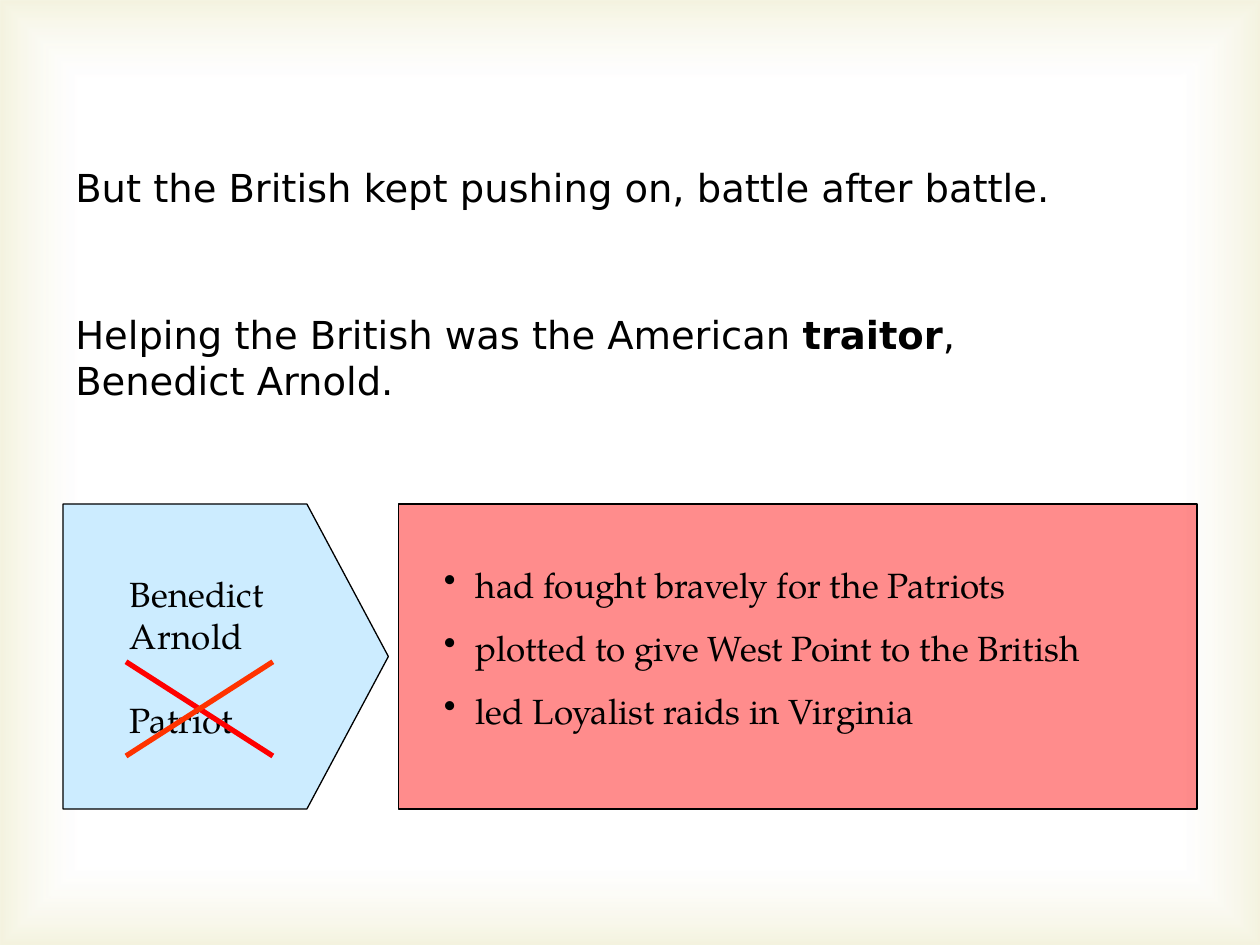
from lxml import etree
from pptx import Presentation
from pptx.dml.color import RGBColor
from pptx.enum.shapes import MSO_CONNECTOR as CONNECTOR, MSO_SHAPE as SHAPE
from pptx.enum.text import MSO_ANCHOR as ANCHOR, PP_ALIGN as ALIGN
from pptx.oxml import parse_xml
from pptx.oxml.ns import nsdecls, qn
from pptx.util import Cm, Pt

BLACK = RGBColor(0, 0, 0)
WHITE = RGBColor(255, 255, 255)
CREAM = RGBColor(0xD1, 0xCA, 0x75)
PALE_BLUE = RGBColor(0xCC, 0xEC, 0xFF)
RED = RGBColor(0xFF, 0, 0)
ORANGE_RED = RGBColor(0xFF, 0x33, 0)
SANS = "DejaVu Sans"
SERIF = "TeX Gyre Pagella"
WIDTH, HEIGHT = 25.4, 19.05
MARGIN = 1.27
PANEL_TOP, PANEL_HEIGHT = 10.16, 6.15


def write(frame, paragraphs, font=SERIF, size=20, margin=0, indent=0,
          spacing=None, gap=0, bullet=None, anchor=ANCHOR.TOP):
    frame.word_wrap = True
    frame.vertical_anchor = anchor
    for index, runs in enumerate(paragraphs):
        paragraph = frame.paragraphs[0] if index == 0 else frame.add_paragraph()
        properties = paragraph._p.get_or_add_pPr()
        properties.set("marL", str(Cm(margin)))
        properties.set("indent", str(Cm(indent)))
        if bullet:
            etree.SubElement(properties, qn("a:buFontTx"))
            etree.SubElement(properties, qn("a:buChar")).set("char", bullet)
        paragraph.alignment = ALIGN.LEFT
        paragraph.line_spacing = spacing
        if index and gap:
            paragraph.space_before = Pt(gap)
        for text, bold in runs:
            for number, line in enumerate(text.split("\n")):
                if number:
                    paragraph.add_line_break()
                run = paragraph.add_run()
                run.text = line
                run.font.name = font
                run.font.size = Pt(size)
                run.font.bold = bold
                run.font.color.rgb = BLACK


def add_statement(slide, top, height, paragraphs):
    statement = slide.shapes.add_textbox(
        Cm(MARGIN), Cm(top), Cm(WIDTH - 2 * MARGIN), Cm(height))
    write(statement.text_frame, paragraphs, font=SANS, size=22)


def add_panel(slide, kind, left, width, color, opacity=100):
    panel = slide.shapes.add_shape(
        kind, Cm(left), Cm(PANEL_TOP), Cm(width), Cm(PANEL_HEIGHT))
    panel.shadow.inherit = False
    panel.fill.solid()
    panel.fill.fore_color.rgb = color
    if opacity < 100:
        tint = panel._element.spPr.find(qn("a:solidFill"))[0]
        etree.SubElement(tint, qn("a:alpha")).set("val", str(opacity * 1000))
    panel.line.color.rgb = BLACK
    panel.line.width = Pt(0.75)
    return panel


def add_stroke(slide, start, end, color):
    stroke = slide.shapes.add_connector(
        CONNECTOR.STRAIGHT, *(Cm(value) for value in start + end))
    stroke.line.color.rgb = color
    stroke.line.width = Pt(3)
    etree.SubElement(stroke._element.spPr, qn("a:effectLst"))


def add_glow(slide):
    glow = slide.shapes.add_shape(SHAPE.RECTANGLE, 0, 0, Cm(WIDTH), Cm(HEIGHT))
    glow.shadow.inherit = False
    glow.line.fill.background()
    stops = "".join(
        f'<a:gs pos="{position * 1000}"><a:srgbClr val="{color}">'
        f'<a:alpha val="{opacity * 1000}"/></a:srgbClr></a:gs>'
        for position, color, opacity in ((83, WHITE, 11), (100, CREAM, 23)))
    gradient = parse_xml(
        f'<a:gradFill {nsdecls("a")} rotWithShape="1"><a:gsLst>{stops}</a:gsLst>'
        '<a:path path="rect"><a:fillToRect l="50000" t="50000" r="50000" '
        'b="50000"/></a:path></a:gradFill>')
    glow._element.spPr.find(qn("a:prstGeom")).addnext(gradient)


def main():
    deck = Presentation()
    deck.slide_width, deck.slide_height = Cm(WIDTH), Cm(HEIGHT)
    slide = deck.slides.add_slide(deck.slide_layouts[6])
    add_glow(slide)

    add_statement(slide, 3.18, 1.19, [
        [("But the British kept pushing on, battle after battle.", False)]])
    add_statement(slide, 6.15, 2.11, [
        [("Helping the British was the American ", False),
         ("traitor", True), (",", False)],
        [("Benedict Arnold.", False)]])

    person = add_panel(slide, SHAPE.PENTAGON, MARGIN, 6.56, PALE_BLUE)
    person.adjustments[0] = 0.267
    write(person.text_frame,
          [[("Benedict\nArnold", False)], [("Patriot", False)]],
          margin=1.1, gap=24, anchor=ANCHOR.MIDDLE)

    deeds = add_panel(slide, SHAPE.RECTANGLE, 8.04, 16.09, RED, opacity=45)
    deeds.text_frame.margin_top = Cm(0.62)
    deeds.text_frame.margin_bottom = Cm(1.4)
    write(deeds.text_frame,
          [[(deed, False)] for deed in (
              "had fought bravely for the Patriots",
              "plotted to give West Point to the British",
              "led Loyalist raids in Virginia")],
          margin=1.3, indent=-0.64, spacing=1.5, bullet="•",
          anchor=ANCHOR.MIDDLE)

    left, right, top, bottom = 2.54, 5.5, 13.34, 15.24
    add_stroke(slide, (left, top), (right, bottom), RED)
    add_stroke(slide, (left, bottom), (right, top), ORANGE_RED)
    deck.save("out.pptx")


if __name__ == "__main__":
    main()
